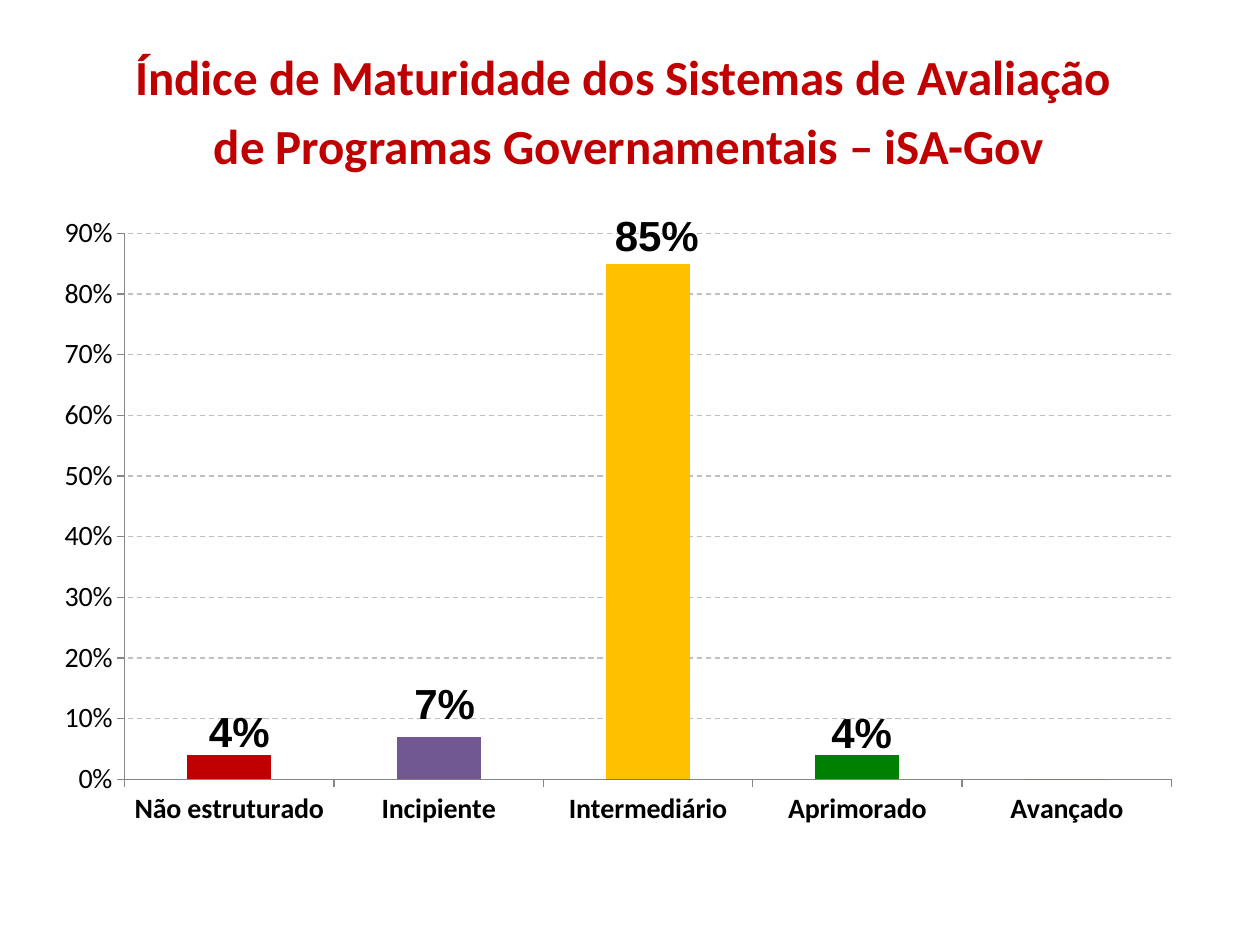
from lxml import etree
from pptx import Presentation
from pptx.chart.data import CategoryChartData
from pptx.dml.color import RGBColor
from pptx.enum import chart as charts, dml, text
from pptx.oxml import ns
from pptx.util import Pt

COLORS = {
    "black": "000000", "red": "C00000", "purple": "725892", "yellow": "FFC000",
    "green": "008000", "cyan": "4BACC6", "grid": "BFBFBF", "axis": "868686",
}
LEVELS = [
    ("Não estruturado", 0.04, "red"),
    ("Incipiente", 0.07, "purple"),
    ("Intermediário", 0.85, "yellow"),
    ("Aprimorado", 0.04, "green"),
    ("Avançado", 0, "cyan"),
]
LABELS = [
    ("4%", 112.3, 399.6, 49.7),
    ("7%", 229.7, 383.8, 49.7),
    ("85%", 344.2, 115.9, 63.4),
    ("4%", 468, 400.3, 49.7),
]
TITLE = ["Índice de Maturidade dos Sistemas de Avaliação ",
         "de Programas Governamentais – iSA-Gov"]
PLOT_LAYOUT = {"x": 0.07, "y": 0.05, "w": 0.91, "h": 0.86}


def rgb(name):
    return RGBColor.from_string(COLORS[name])


def apply(target, values):
    for name, value in values.items():
        setattr(target, name, value)


class SlideBuilder:
    fonts = {
        "title": {"name": "Calibri", "size": Pt(28), "bold": True},
        "label": {"name": "Arial", "size": Pt(24), "bold": True},
        "category": {"name": "Calibri", "size": Pt(16), "bold": True},
        "value": {"name": "Calibri", "size": Pt(16), "bold": False},
        "chart": {"name": "Calibri", "size": Pt(10)},
    }

    def __init__(self, slide):
        self.slide = slide

    def style_font(self, font, style, color="black"):
        apply(font, self.fonts[style])
        font.color.rgb = rgb(color)

    def add_text(self, box, lines, style, color="black", frame_format=None, paragraph_format=None):
        shape = self.slide.shapes.add_textbox(*map(Pt, box))
        frame = shape.text_frame
        apply(frame, frame_format or {})
        for index, line in enumerate(lines):
            paragraph = frame.add_paragraph() if index else frame.paragraphs[0]
            apply(paragraph, paragraph_format or {})
            if index:
                paragraph.space_before = Pt(5.6)
            run = paragraph.add_run()
            run.text = line
            self.style_font(run.font, style, color)

    def style_axis(self, axis, style, values):
        apply(axis, {"major_tick_mark": charts.XL_TICK_MARK.OUTSIDE,
                     "minor_tick_mark": charts.XL_TICK_MARK.NONE, **values})
        axis.format.line.color.rgb = rgb("axis")
        axis.format.line.width = Pt(0.75)
        self.style_font(axis.tick_labels.font, style)

    def set_plot_layout(self, chart):
        area = chart._chartSpace.chart.plotArea
        for old in area.findall(ns.qn("c:layout")):
            area.remove(old)
        layout = etree.Element(ns.qn("c:layout"))
        manual = etree.SubElement(layout, ns.qn("c:manualLayout"))
        settings = {"layoutTarget": "inner", "xMode": "edge", "yMode": "edge", **PLOT_LAYOUT}
        for name, value in settings.items():
            etree.SubElement(manual, ns.qn(f"c:{name}")).set("val", str(value))
        area.insert(0, layout)

    def add_chart(self, box, levels):
        data = CategoryChartData(number_format="0%")
        data.categories = [name for name, _, _ in levels]
        for index, (_, value, _) in enumerate(levels):
            values = [value if column == index else 0 for column in range(len(levels))]
            data.add_series(f"Series {index + 1}", values)
        chart = self.slide.shapes.add_chart(
            charts.XL_CHART_TYPE.COLUMN_STACKED, *map(Pt, box), data).chart
        apply(chart, {"has_legend": False, "has_title": False})
        self.style_font(chart.font, "chart")
        plot = chart.plots[0]
        apply(plot, {"gap_width": 150, "overlap": 100, "vary_by_categories": False})
        for series, (_, _, color) in zip(plot.series, levels):
            series.format.fill.solid()
            series.format.fill.fore_color.rgb = rgb(color)
            series.invert_if_negative = False
        self.style_axis(chart.category_axis, "category", {"has_major_gridlines": False})
        axis = chart.value_axis
        self.style_axis(axis, "value", {"minimum_scale": 0, "maximum_scale": 0.9,
                                        "major_unit": 0.1, "has_major_gridlines": True})
        apply(axis.tick_labels, {"number_format": "0%", "number_format_is_linked": False})
        grid = axis.major_gridlines.format.line
        grid.color.rgb = rgb("grid")
        apply(grid, {"width": Pt(0.75), "dash_style": dml.MSO_LINE.DASH})
        self.set_plot_layout(chart)


def main():
    presentation = Presentation()
    apply(presentation, {"slide_width": Pt(720), "slide_height": Pt(540)})
    builder = SlideBuilder(presentation.slides.add_slide(presentation.slide_layouts[6]))
    builder.add_chart((25.2, 115.2, 657.4, 362.9), LEVELS)
    for label, left, top, width in LABELS:
        builder.add_text((left, top, width, 36), [label], "label", frame_format={
            "word_wrap": False, "auto_size": text.MSO_AUTO_SIZE.SHAPE_TO_FIT_TEXT})
    builder.add_text((35.3, 23, 648, 77.8), TITLE, "title", "red",
                     {"word_wrap": True}, {"alignment": text.PP_ALIGN.CENTER})
    presentation.save("out.pptx")


if __name__ == "__main__":
    main()
